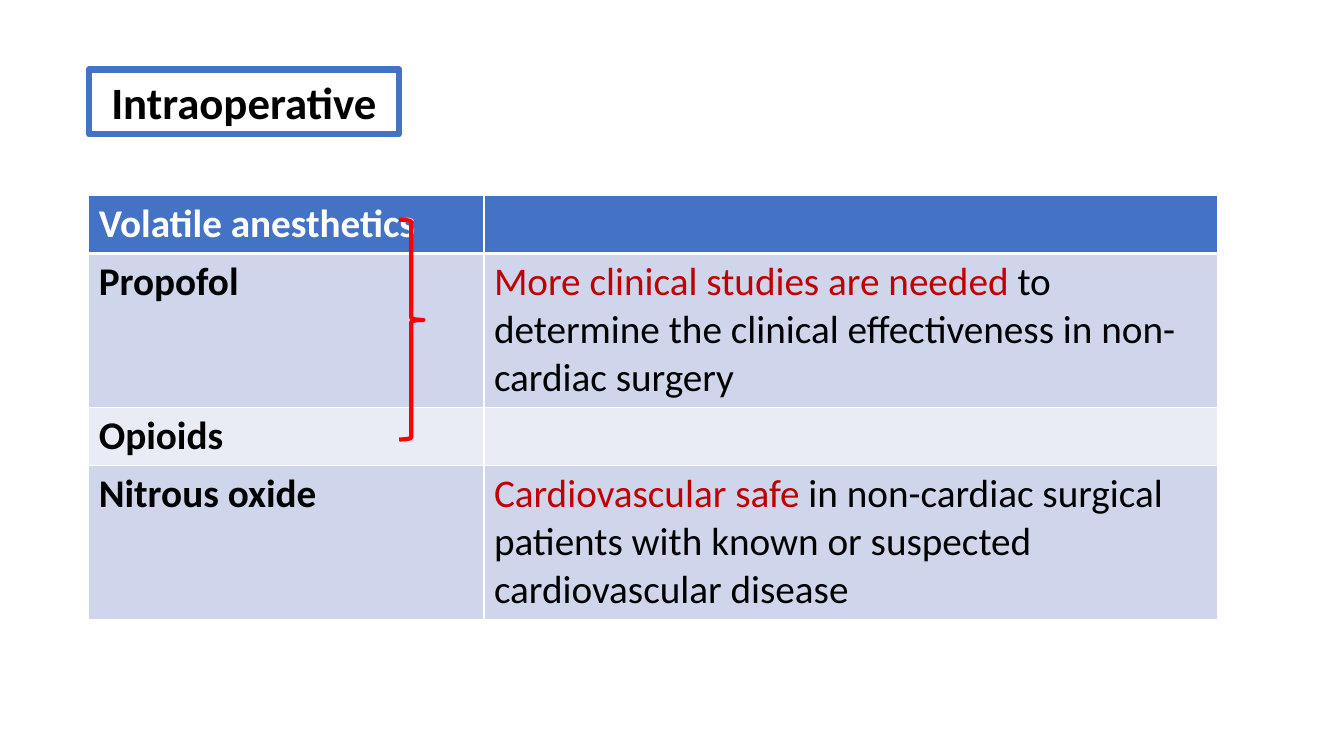
from dataclasses import dataclass

from lxml.etree import SubElement
from pptx import Presentation
from pptx.dml.color import RGBColor
from pptx.enum.shapes import MSO_SHAPE
from pptx.enum.text import MSO_ANCHOR, PP_ALIGN
from pptx.oxml.ns import qn
from pptx.util import Inches, Pt


@dataclass(frozen=True)
class Theme:
    font: str = "Calibri"
    title_size: int = 32
    table_size: int = 28
    blue: str = "4472C4"
    band_dark: str = "CFD5EA"
    band_light: str = "E9EBF5"
    white: str = "FFFFFF"
    black: str = "000000"
    emphasis: str = "C00000"
    brace: str = "FF0000"


THEME = Theme()
LINE_HEIGHT = 0.475
CELL_PADDING = 0.1
LEFT_COLUMN_SHARE = 0.35

# Each row: drug, lines its text takes, fill, and paragraphs of (text, colour) runs
DRUG_ROWS = [
    ("Volatile anesthetics", 1, THEME.blue, []),
    ("Propofol", 3, THEME.band_dark, [
        [("More clinical studies are needed ", THEME.emphasis),
         ("to determine the clinical effectiveness in non-cardiac surgery", THEME.black)],
    ]),
    ("Opioids", 1, THEME.band_light, []),
    ("Nitrous oxide", 3, THEME.band_dark, [
        [("Cardiovascular safe ", THEME.emphasis),
         ("in non-cardiac surgical", THEME.black)],
        [("patients with known or suspected cardiovascular disease", THEME.black)],
    ]),
]


def rgb(colour):
    return RGBColor.from_string(colour)


def place(shape, box):
    shape.left, shape.top, shape.width, shape.height = map(Inches, box)


def outline(shape, colour, width):
    shape.line.color.rgb = rgb(colour)
    shape.line.width = Pt(width)


def add_title(slide, box):
    title = slide.shapes.title
    place(title, box)
    outline(title, THEME.blue, 4.5)
    frame = title.text_frame
    frame.text = "Intraoperative"
    frame.vertical_anchor = MSO_ANCHOR.MIDDLE
    paragraph = frame.paragraphs[0]
    paragraph.alignment = PP_ALIGN.CENTER
    font = paragraph.font
    font.name, font.size, font.bold = THEME.font, Pt(THEME.title_size), True
    font.color.rgb = rgb(THEME.black)


def style_cell(cell, fill, bottom_width):
    """Draw the white cell borders, then the fill that must follow them."""
    properties = cell._tc.get_or_add_tcPr()
    for side, width in (("L", 1), ("R", 1), ("T", 1), ("B", bottom_width)):
        line = SubElement(properties, qn(f"a:ln{side}"), w=str(Pt(width)))
        solid = SubElement(line, qn("a:solidFill"))
        SubElement(solid, qn("a:srgbClr"), val=THEME.white)
    cell.fill.solid()
    cell.fill.fore_color.rgb = rgb(fill)


def write_cell(cell, paragraphs, bold):
    frame = cell.text_frame
    for index, runs in enumerate(paragraphs):
        paragraph = frame.add_paragraph() if index else frame.paragraphs[0]
        font = paragraph.font
        font.name, font.size, font.bold = THEME.font, Pt(THEME.table_size), bold
        for text, colour in runs:
            run = paragraph.add_run()
            run.text = text
            run.font.color.rgb = rgb(colour)


def add_drug_table(slide, left, top, width):
    heights = [lines * LINE_HEIGHT + CELL_PADDING for _, lines, _, _ in DRUG_ROWS]
    table = slide.shapes.add_table(
        len(DRUG_ROWS), 2, *map(Inches, (left, top, width, sum(heights)))).table
    for column, share in zip(table.columns, (LEFT_COLUMN_SHARE, 1 - LEFT_COLUMN_SHARE)):
        column.width = Inches(width * share)
    for index, (drug, _, fill, finding) in enumerate(DRUG_ROWS):
        is_header = index == 0
        table.rows[index].height = Inches(heights[index])
        for column in range(2):
            style_cell(table.cell(index, column), fill, 3 if is_header else 1)
        drug_colour = THEME.white if is_header else THEME.black
        write_cell(table.cell(index, 0), [[(drug, drug_colour)]], True)
        write_cell(table.cell(index, 1), finding, False)


def add_brace(slide, box):
    brace = slide.shapes.add_shape(MSO_SHAPE.RIGHT_BRACE, *map(Inches, box))
    brace.shadow.inherit = False
    brace.fill.background()
    outline(brace, THEME.brace, 3)
    brace.adjustments[0] = 0.083
    brace.adjustments[1] = 0.456


def build_intraoperative_slide(presentation, left, top, width):
    slide = presentation.slides.add_slide(presentation.slide_layouts[5])
    title_width = 3.08
    table_top = top + 1.25
    add_title(slide, (left, top, title_width, 0.64))
    add_drug_table(slide, left, table_top, width)
    add_brace(slide, (left + title_width, table_top + 0.24, 0.24, 2.18))


def main():
    presentation = Presentation()
    presentation.slide_width = Inches(13.33)
    presentation.slide_height = Inches(7.5)
    build_intraoperative_slide(presentation, 0.88, 0.69, 11.2)
    presentation.save("out.pptx")


if __name__ == "__main__":
    main()
